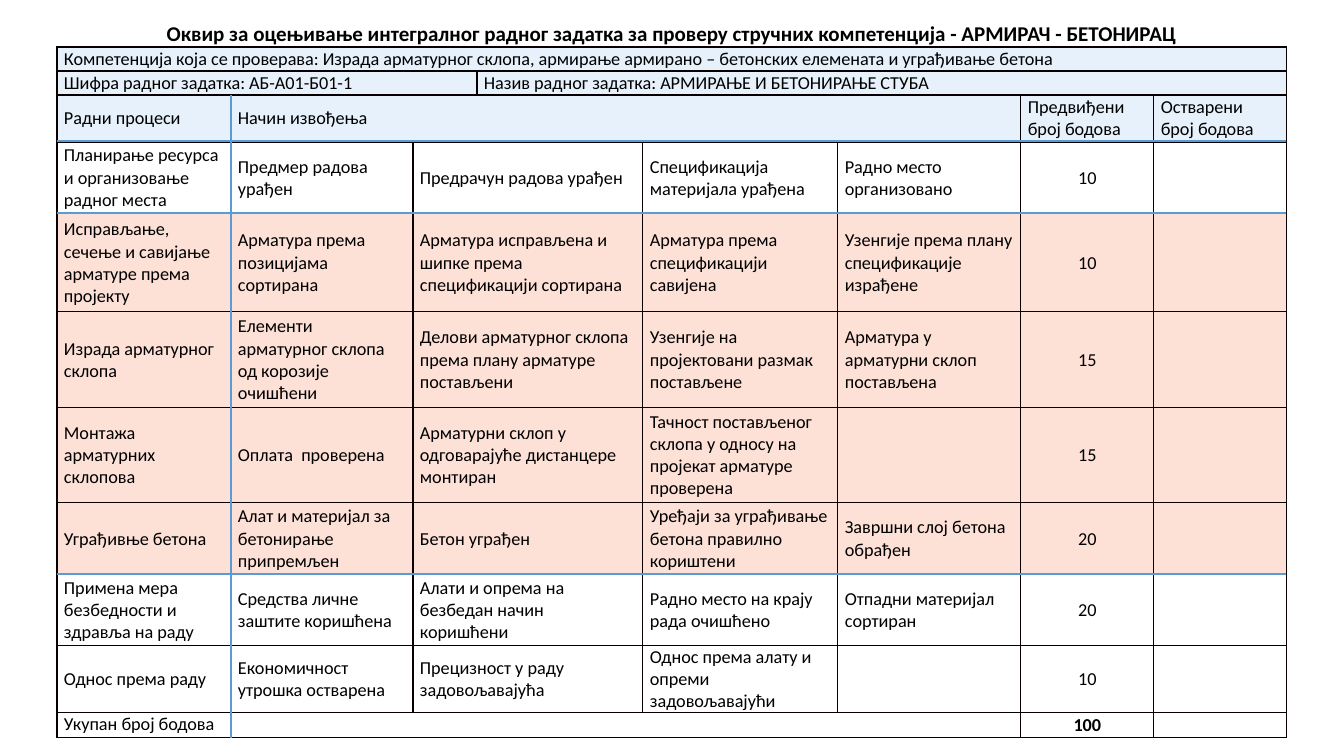
from lxml.etree import SubElement
from pptx import Presentation
from pptx.dml.color import RGBColor
from pptx.enum.shapes import MSO_CONNECTOR
from pptx.enum.text import MSO_ANCHOR, PP_ALIGN
from pptx.oxml.ns import qn
from pptx.util import Pt

PX = 9071.43  # EMU in one px
FONT = "Calibri"
TITLE_SIZE, TEXT_SIZE = Pt(15), Pt(13)
BORDER_WIDTH = Pt(1)
SIDE_MARGIN = 7

BLACK = RGBColor(0x00, 0x00, 0x00)
BORDER = RGBColor(0x08, 0x00, 0x00)
BLUE = RGBColor(0x5B, 0x9B, 0xD5)
PALE_BLUE = RGBColor(0xDB, 0xEB, 0xFA)
PEACH = RGBColor(0xFD, 0xE1, 0xD7)
WHITE = RGBColor(0xFF, 0xFF, 0xFF)
HEADER_OPACITY = 68000

COLUMN_WIDTHS = [174, 182, 64, 166, 195, 183, 133, 133]
POINTS_COLUMN = 6
FULL = [8]
CODE_NAME = [3, 5]
WIDE_MIDDLE = [1, 5, 1, 1]
PROCESS = [1, 1, 2, 1, 1, 1, 1]

# Each row: height, fill, column spans, texts
ROWS = [
    (26, None, FULL,
     ["Оквир за оцењивање интегралног радног задатка за проверу стручних компетенција - АРМИРАЧ - БЕТОНИРАЦ"]),
    (24, PALE_BLUE, FULL,
     ["Компетенција која се проверава: Израда арматурног склопа, армирање армирано – бетонских елемената и уграђивање бетона"]),
    (24, PALE_BLUE, CODE_NAME,
     ["Шифра радног задатка: АБ-А01-Б01-1", "Назив радног задатка: АРМИРАЊЕ И БЕТОНИРАЊЕ СТУБА"]),
    (47, PALE_BLUE, WIDE_MIDDLE,
     ["Радни процеси", "Начин извођења", "Предвиђени број бодова", "Остварени број бодова"]),
    (72, WHITE, PROCESS,
     ["Планирање ресурса и организовање радног места", "Предмер радова урађен",
      "Предрачун радова урађен", "Спецификација материјала урађена",
      "Радно место организовано", "10", ""]),
    (98, PEACH, PROCESS,
     ["Исправљање, сечење и савијање арматуре према пројекту",
      "Арматура према позицијама сортирана",
      "Арматура исправљена и шипке према спецификацији сортирана",
      "Арматура према спецификацији савијена",
      "Узенгије према плану спецификације израђене", "10", ""]),
    (96, PEACH, PROCESS,
     ["Израда арматурног склопа", "Елементи арматурног склопа од корозије очишћени",
      "Делови арматурног склопа према плану арматуре постављени",
      "Узенгије на пројектовани размак постављене",
      "Арматура у арматурни склоп постављена", "15", ""]),
    (95, PEACH, PROCESS,
     ["Монтажа арматурних склопова", "Оплата  проверена",
      "Арматурни склоп у одговарајуће дистанцере монтиран",
      "Тачност постављеног склопа у односу на пројекат арматуре проверена",
      "", "15", ""]),
    (72, PEACH, PROCESS,
     ["Уграђивње бетона", "Алат и материјал за бетонирање припремљен",
      "Бетон уграђен", "Уређаји за уграђивање бетона правилно кориштени",
      "Завршни слој бетона обрађен", "20", ""]),
    (71, WHITE, PROCESS,
     ["Примена мера безбедности и здравља на раду", "Средства личне заштите коришћена",
      "Алати и опрема на безбедан начин коришћени",
      "Радно место на крају рада очишћено", "Отпадни материјал сортиран", "20", ""]),
    (67, WHITE, PROCESS,
     ["Однос према раду", "Економичност утрошка остварена",
      "Прецизност у раду задовољавајућа",
      "Однос према алату и опреми задовољавајући", "", "10", ""]),
    (25, WHITE, WIDE_MIDDLE, ["Укупан број бодова", "", "100", ""]),
]
TITLE_ROW, HEADING_ROW, TOTAL_ROW = 0, 3, len(ROWS) - 1


def px(length):
    return round(length * PX)


def set_borders(cell, visible_sides):
    properties = cell._tc.get_or_add_tcPr()
    for side in "LRTB":
        line = SubElement(properties, qn(f"a:ln{side}"), w=str(BORDER_WIDTH))
        if side in visible_sides:
            fill = SubElement(line, qn("a:solidFill"))
            SubElement(fill, qn("a:srgbClr"), val=str(BORDER))
        else:
            SubElement(line, qn("a:noFill"))


def set_fill(cell, color):
    if color is None:
        cell.fill.background()
        return
    cell.fill.solid()
    cell.fill.fore_color.rgb = color
    if color == PALE_BLUE:
        color_element = cell._tc.tcPr.find(f"{qn('a:solidFill')}/{qn('a:srgbClr')}")
        SubElement(color_element, qn("a:alpha"), val=str(HEADER_OPACITY))


def write_text(cell, text, size, bold, alignment):
    paragraph = cell.text_frame.paragraphs[0]
    paragraph.alignment = alignment
    if text:
        paragraph.text = text
        font = paragraph.runs[0].font
        font.name, font.size, font.bold = FONT, size, bold
        font.color.rgb = BLACK
    else:  # keeps empty cells from stretching their row
        SubElement(paragraph._p, qn("a:endParaRPr"), sz=str(size.centipoints))


def format_cell(cell, row, color):
    cell.margin_left = cell.margin_right = px(SIDE_MARGIN)
    cell.margin_top = cell.margin_bottom = 0
    cell.vertical_anchor = MSO_ANCHOR.MIDDLE
    set_borders(cell, "B" if row == TITLE_ROW else "LRTB")
    set_fill(cell, color)


def add_assessment_table(slide, left, top):
    width, height = sum(COLUMN_WIDTHS), sum(row[0] for row in ROWS)
    frame = slide.shapes.add_table(len(ROWS), len(COLUMN_WIDTHS),
                                   px(left), px(top), px(width), px(height))
    table = frame.table
    table.first_row = table.horz_banding = False
    for column, column_width in zip(table.columns, COLUMN_WIDTHS):
        column.width = px(column_width)

    for row, (row_height, color, spans, texts) in enumerate(ROWS):
        table.rows[row].height = px(row_height)
        column = 0
        for span, text in zip(spans, texts):
            cell = table.cell(row, column)
            if span > 1:
                cell.merge(table.cell(row, column + span - 1))
            is_title = row == TITLE_ROW
            is_points = row > HEADING_ROW and column == POINTS_COLUMN
            size = TITLE_SIZE if is_title else TEXT_SIZE
            bold = is_title or (row == TOTAL_ROW and is_points)
            alignment = PP_ALIGN.CENTER if is_title or is_points else PP_ALIGN.LEFT
            for offset in range(span):
                part = table.cell(row, column + offset)
                format_cell(part, row, color)
                write_text(part, "" if offset else text, size, bold, alignment)
            column += span
    table.cell(TOTAL_ROW, 0).vertical_anchor = MSO_ANCHOR.TOP


def add_rule(slide, start, end, width):
    rule = slide.shapes.add_connector(MSO_CONNECTOR.STRAIGHT,
                                      *map(px, start), *map(px, end))
    rule.line.color.rgb = BLUE
    rule.line.width = Pt(width)
    SubElement(rule._element.spPr, qn("a:effectLst"))


def add_section_rules(slide, left, top):
    right = left + sum(COLUMN_WIDTHS) - 1
    row_tops = [top + sum(row[0] for row in ROWS[:index]) for index in range(len(ROWS) + 1)]
    # Below the headings, the planning row and the concrete row
    for row in (9, 5, 4):
        y = row_tops[row] - 1
        add_rule(slide, (left, y), (right, y), 1.5)
    # Beside the work processes
    x = left + COLUMN_WIDTHS[0]
    add_rule(slide, (x, row_tops[-1]), (x, row_tops[HEADING_ROW]), 1.75)


def main():
    presentation = Presentation()
    presentation.slide_width, presentation.slide_height = px(1344), px(756)
    slide = presentation.slides.add_slide(presentation.slide_layouts[6])
    add_assessment_table(slide, 57, 21)
    add_section_rules(slide, 57, 21)
    presentation.save("out.pptx")


if __name__ == "__main__":
    main()
